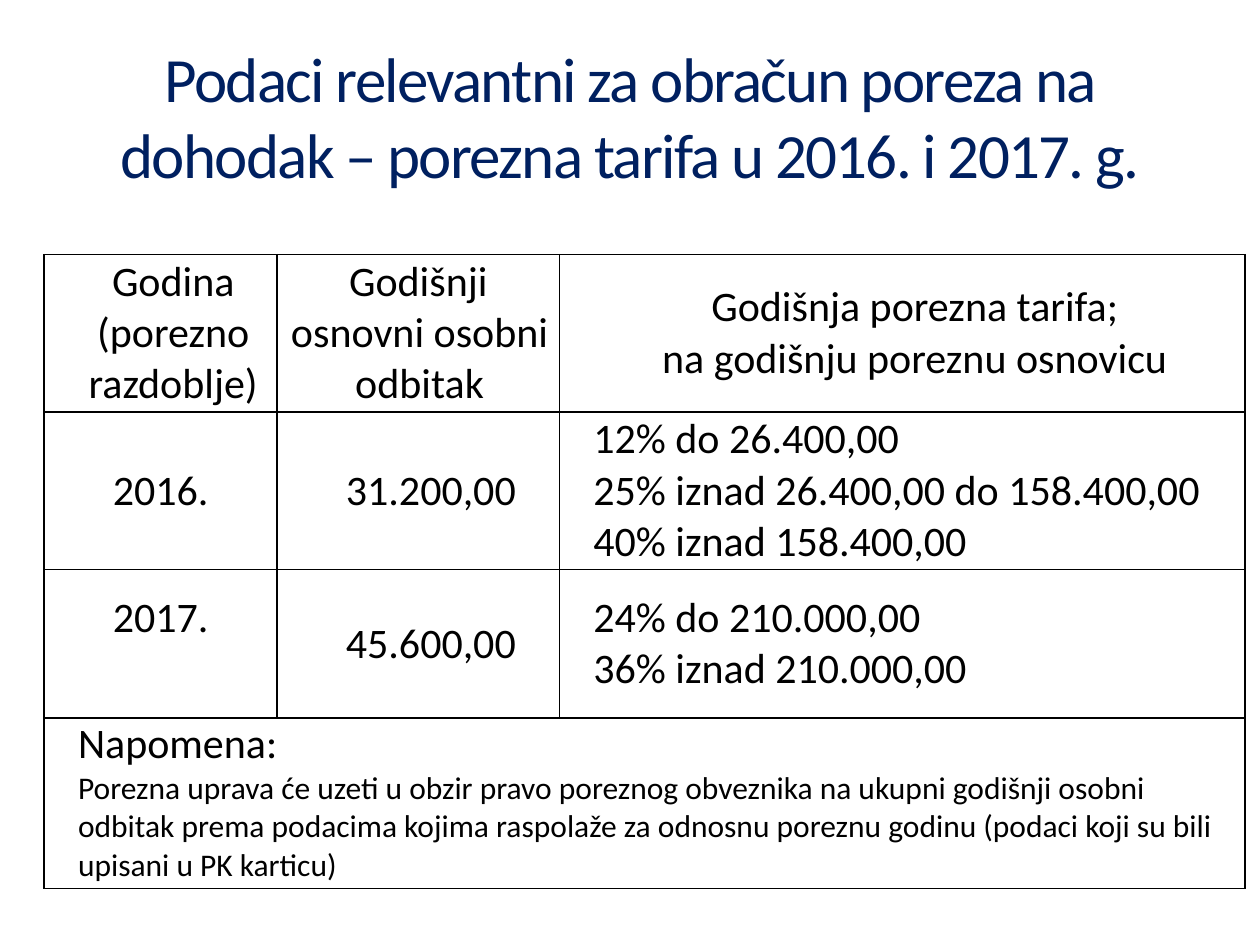
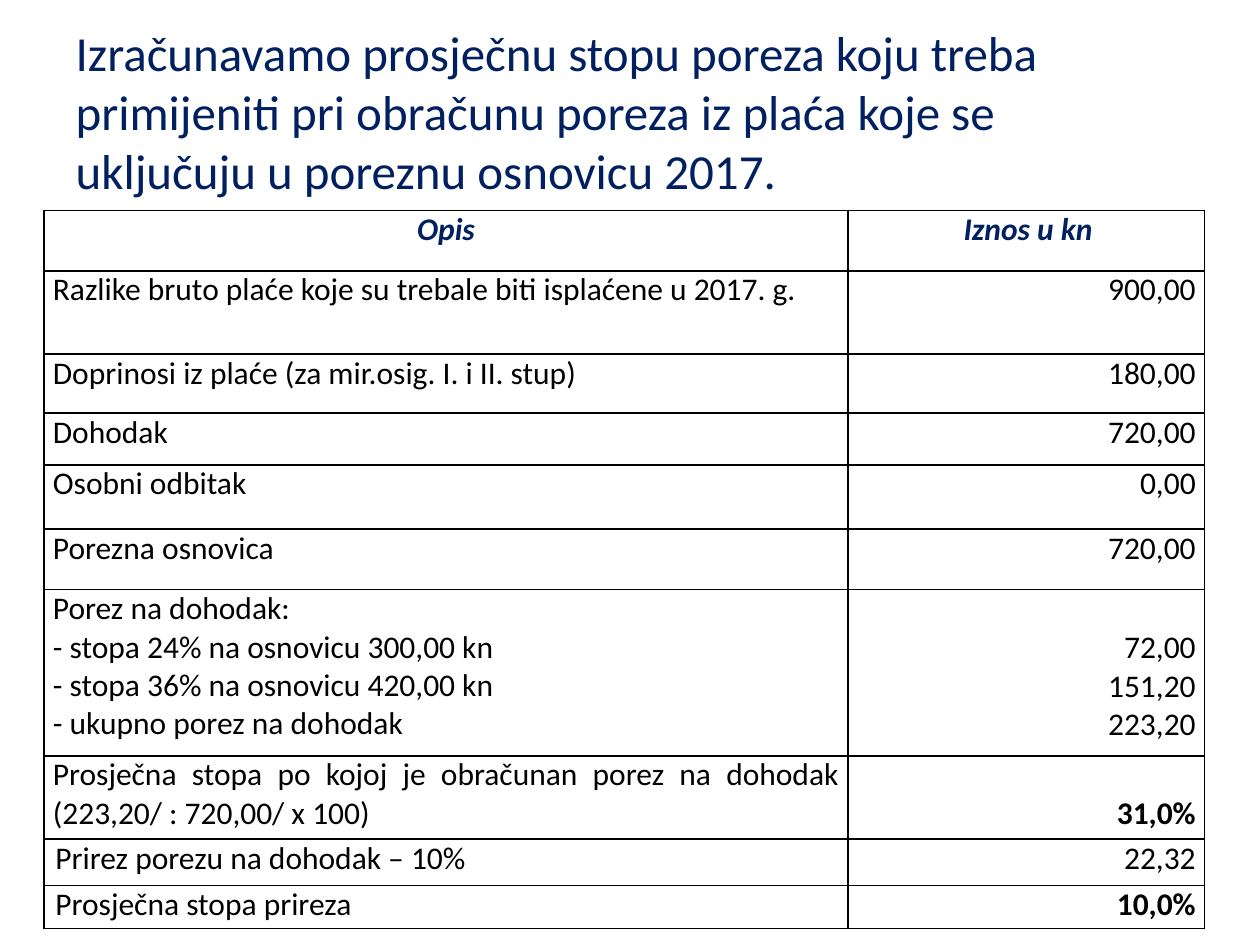
import pptx
import pptx.util
import pptx.dml.color
import pptx.enum.text
import pptx.oxml

Inches = pptx.util.Inches
Align = pptx.enum.text.PP_ALIGN
Anchor = pptx.enum.text.MSO_ANCHOR
FONT = "Calibri"
NAVY = "002060"
BLACK = "000000"
LEFT = 0.35
DRAWING = "http://schemas.openxmlformats.org/drawingml/2006/main"

RATES = [
    ["Godina\n(porezno razdoblje)", "Godišnji osnovni osobni odbitak",
     "Godišnja porezna tarifa;\nna godišnju poreznu osnovicu"],
    ["2016.", "31.200,00",
     "12% do 26.400,00\n25% iznad 26.400,00 do 158.400,00\n40% iznad 158.400,00"],
    ["2017.", "45.600,00", "24% do 210.000,00\n36% iznad 210.000,00"],
]
NOTE = ("Porezna uprava će uzeti u obzir pravo poreznog obveznika na ukupni godišnji "
        "osobni odbitak prema podacima kojima raspolaže za odnosnu poreznu godinu "
        "(podaci koji su bili upisani u PK karticu)")
STEPS = [
    ("Razlike bruto plaće koje su trebale biti isplaćene u 2017. g.", "900,00"),
    ("Doprinosi iz plaće (za mir.osig. I. i II. stup)", "180,00"),
    ("Dohodak", "720,00"),
    ("Osobni odbitak", "0,00"),
    ("Porezna osnovica", "720,00"),
    ("Porez na dohodak:\n- stopa 24% na osnovicu 300,00 kn\n"
     "- stopa 36% na osnovicu 420,00 kn\n- ukupno porez na dohodak",
     "72,00\n151,20\n223,20"),
    ("Prosječna stopa po kojoj je obračunan porez na dohodak "
     "(223,20/ : 720,00/ x 100)", "31,0%"),
    ("Prirez porezu na dohodak – 10%", "22,32"),
    ("Prosječna stopa prireza", "10,0%"),
]


def paint(color, code):
    color.rgb = pptx.dml.color.RGBColor.from_string(code)


def write(frame, text, size=18, color=BLACK, align=Align.LEFT, bold=False,
          italic=False, pad=0, lead=0, track=0):
    for line in text.split("\n"):
        para = frame.paragraphs[-1]
        if para.runs:
            para = frame.add_paragraph()
        para.alignment = align
        props = para._p.get_or_add_pPr()
        props.set("marL", str(Inches(pad)))
        props.set("indent", str(Inches(lead)))
        run = para.add_run()
        run.text = line
        font = run.font
        font.name = FONT
        font.size = pptx.util.Pt(size)
        font.bold = bold
        font.italic = italic
        paint(font.color, color)
        if track:
            run._r.get_or_add_rPr().set("spc", str(track * 100))


def head(slide, text, top, height, anchor, **style):
    title = slide.shapes.title
    title.left, title.top = Inches(0.5), Inches(top)
    title.width, title.height = Inches(9), Inches(height)
    frame = title.text_frame
    frame.word_wrap = True
    frame.auto_size = pptx.enum.text.MSO_AUTO_SIZE.NONE
    frame.vertical_anchor = anchor
    write(frame, text, color=NAVY, **style)


def frame_cell(cell):
    cell.fill.background()
    cell.margin_left = cell.margin_right = Inches(0.07)
    cell.margin_top = cell.margin_bottom = 0
    props = cell._tc.get_or_add_tcPr()
    for spot, side in enumerate("LRTB"):
        props.insert(spot, pptx.oxml.parse_xml(
            f'<a:ln{side} xmlns:a="{DRAWING}" w="12700"><a:solidFill>'
            f'<a:srgbClr val="{BLACK}"/></a:solidFill></a:ln{side}>'))


def grid(slide, top, cols, rows):
    table = slide.shapes.add_table(
        len(rows), len(cols), Inches(LEFT), Inches(top),
        Inches(sum(cols)), Inches(sum(rows))).table
    table.first_row = table.horz_banding = False
    for col, width in zip(table.columns, cols):
        col.width = Inches(width)
    for row, height in zip(table.rows, rows):
        row.height = Inches(height)
    for cell in table.iter_cells():
        frame_cell(cell)
    return table


def show_rates(slide):
    head(slide, "Podaci relevantni za obračun poreza na dohodak – porezna tarifa "
         "u 2016. i 2017. g.", 0.13, 1.57, Anchor.MIDDLE,
         size=36, align=Align.CENTER, track=-1)
    table = grid(slide, 2.02, [1.85, 2.24, 5.44], [1.25, 1.25, 1.18, 1.35])
    for r, row in enumerate(RATES):
        for c, text in enumerate(row):
            cell = table.cell(r, c)
            cell.vertical_anchor = Anchor.MIDDLE
            pad, lead = 0.2, 0
            if r == 0 and c == 1:
                pad, lead = 0.02, -0.02
            elif r and c == 0:
                pad = 0
            align = Align.LEFT if r and c == 2 else Align.CENTER
            write(cell.text_frame, text, size=24, align=align, pad=pad, lead=lead)
    table.cell(2, 0).margin_bottom = Inches(0.41)
    note = table.cell(3, 0)
    note.merge(table.cell(3, 2))
    write(note.text_frame, "Napomena:", size=24, pad=0.2)
    write(note.text_frame, NOTE, pad=0.2)


def show_steps(slide):
    head(slide, "Izračunavamo prosječnu stopu poreza koju treba primijeniti pri "
         "obračunu poreza iz plaća koje se uključuju u poreznu osnovicu 2017.",
         0.13, 1.54, Anchor.TOP, size=28)
    table = grid(slide, 1.67, [6.38, 2.83],
                 [0.48, 0.66, 0.47, 0.41, 0.51, 0.48, 1.32, 0.66, 0.37, 0.34])
    for c, text in enumerate(["Opis", "Iznos u kn"]):
        write(table.cell(0, c).text_frame, text, color=NAVY, align=Align.CENTER,
              bold=True, italic=True, lead=0.03 * c)
    for r, (label, sum_text) in enumerate(STEPS, 1):
        write(table.cell(r, 0).text_frame, label, align=Align.JUSTIFY,
              lead=0.02 if r > 7 else 0)
        write(table.cell(r, 1).text_frame, sum_text, align=Align.RIGHT,
              bold=sum_text.endswith("%"))
    for r in (6, 7):
        table.cell(r, 1).margin_top = Inches(0.31)


def main():
    deck = pptx.Presentation()
    deck.slide_width, deck.slide_height = Inches(10), Inches(7.5)
    for show in (show_rates, show_steps):
        show(deck.slides.add_slide(deck.slide_layouts[5]))
    deck.save("out.pptx")


if __name__ == "__main__":
    main()
